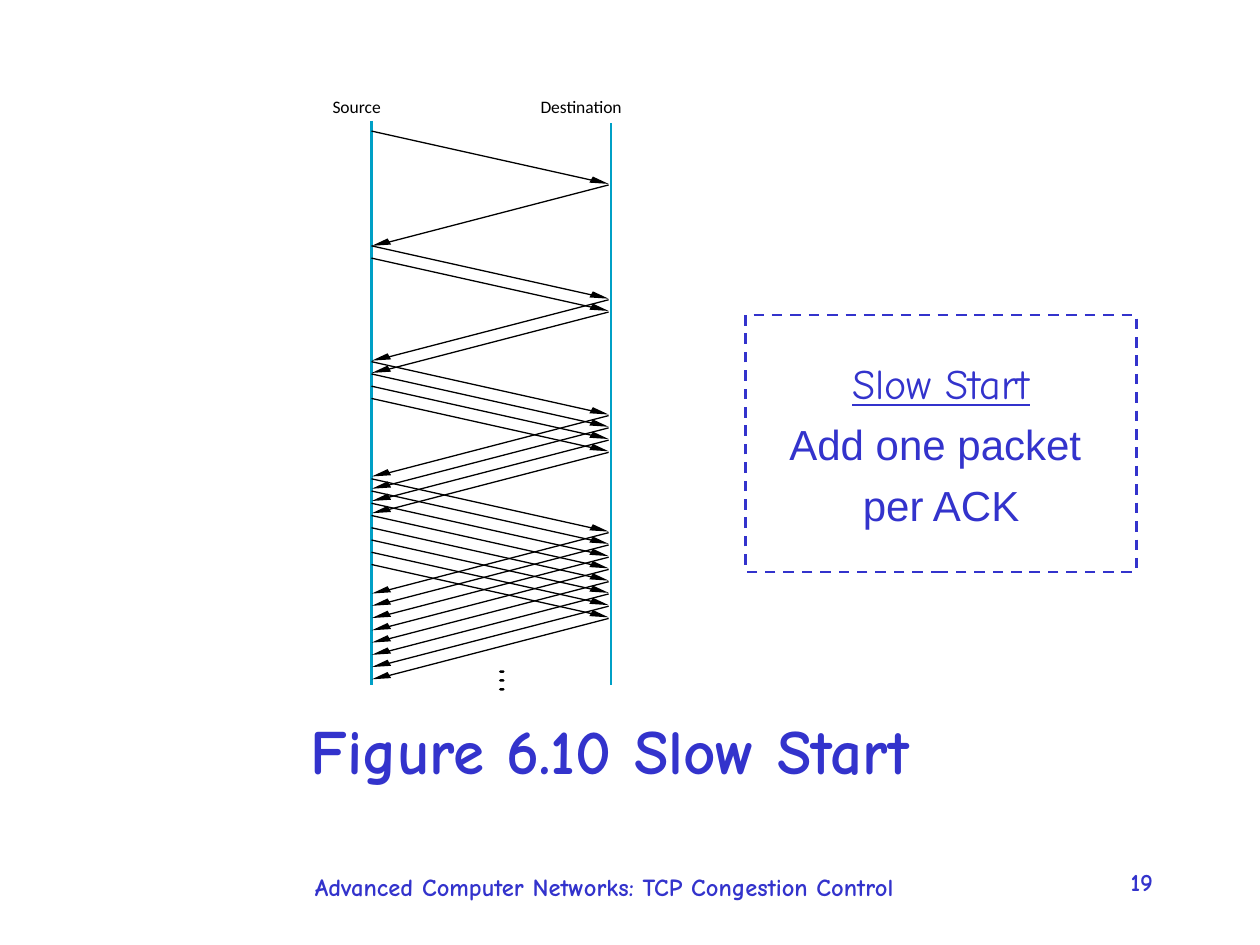
from dataclasses import dataclass

from lxml import etree
from pptx import Presentation, util as u
from pptx.dml.color import RGBColor
from pptx.enum import dml, shapes, text
from pptx.oxml.ns import qn

Pt = u.Pt


@dataclass(frozen=True)
class Theme:
    blue: RGBColor = RGBColor(0x33, 0x33, 0xCC)
    teal: RGBColor = RGBColor(0x00, 0xA0, 0xC6)
    black: RGBColor = RGBColor(0, 0, 0)
    hand: str = "Comic Neue"
    sans: str = "Arial"
    label: str = "Calibri"
    title_size: int = 36
    note_size: int = 24
    footer_size: int = 14
    label_size: int = 10


T = Theme()
ALIGN = text.PP_ALIGN


def style(p, color, size, align=ALIGN.LEFT, **fmt):
    """Format a paragraph and the font of its runs."""
    p.alignment = align
    for r in p.runs:
        for key, value in dict(fmt, size=Pt(size)).items():
            setattr(r.font, key, value)
        r.font.color.rgb = color


def text_box(parent, box, words, color, size, margin=None, wrap=True, **fmt):
    tf = parent.add_textbox(*map(Pt, box)).text_frame
    tf.word_wrap = wrap
    if margin is not None:
        for side in ("left", "top", "right", "bottom"):
            setattr(tf, f"margin_{side}", Pt(margin))
    tf.text = words
    style(tf.paragraphs[0], color, size, **fmt)


def line(parent, start, end, color, width):
    sp = parent.add_connector(shapes.MSO_CONNECTOR.STRAIGHT,
                              *map(Pt, (*start, *end)))
    sp.line.color.rgb = color
    sp.line.width = Pt(width)
    etree.SubElement(sp._element.spPr, qn("a:effectLst"))


def outline(parent, contours, color):
    """Filled freeform made of one or more closed contours."""
    fb = None
    for contour in contours:
        first, *rest = [(Pt(x), Pt(y)) for x, y in contour]
        if fb is None:
            fb = parent.build_freeform(*first, scale=1.0)
        else:
            fb.move_to(*first)
        fb.add_line_segments(rest, close=True)
    sp = fb.convert_to_shape()
    sp.shadow.inherit = False
    sp.fill.solid()
    sp.fill.fore_color.rgb = color
    sp.line.fill.background()


def message(parent, start, tip, way):
    """Shaft and slim head; way is 1 to the right and -1 to the left."""
    x, y = tip
    line(parent, start, (x - 9.5 * way, y - 2.1), T.black, 0.75)
    outline(parent, [[(x - 11 * way, y - 0.7), tip,
                      (x - 9 * way, y - 4.2)]], T.black)


def sequence_diagram(s, box):
    """Packets double with each round trip between the two timelines."""
    x, y, w, h = box
    group = s.shapes.add_group_shape().shapes
    right = x + w

    # Names and timelines
    for left, width, words in ((x - 22.3, 32, "Source"),
                               (right - 40.3, 50, "Destination")):
        text_box(group, (left, y - 14.4, width, 12), words, T.black,
                 T.label_size, margin=0, wrap=False, name=T.label)
    line(group, (x, y), (x, y + h), T.teal, 1.5)
    line(group, (right, y + 1.4), (right, y + h), T.teal, 1.5)

    # Packets and their acknowledgements
    gap, arrival, reply, returned = 7, 30.2, 30.8, 65.6
    for trip, first in enumerate((5.8, 71.4, 137.6, 204.5)):
        for i in range(2 ** trip):
            sent = y + first + i * gap
            message(group, (x, sent), (right - 1.4, sent + arrival), 1)
            message(group, (right - 1.4, sent + reply),
                    (x + 0.2, sent + returned), -1)

    # Continuation dots
    dot = [(0, 0.7), (0.8, 0), (2.6, 0), (3.2, 0.7), (2.6, 1.4), (0.8, 1.4)]
    outline(group, [[(x + 72.8 + dx, y + 314 + 5.05 * i + dy)
                     for dx, dy in dot] for i in range(3)], T.black)


def note(s, box):
    sp = s.shapes.add_shape(shapes.MSO_SHAPE.RECTANGLE, *map(Pt, box))
    sp.shadow.inherit = False
    sp.fill.background()
    sp.line.color.rgb = T.blue
    sp.line.width = Pt(1.5)
    sp.line.dash_style = dml.MSO_LINE.DASH
    tf = sp.text_frame
    tf.word_wrap = False
    tf.vertical_anchor = text.MSO_ANCHOR.MIDDLE
    lines = (("Slow Start", T.hand, True),
             ("Add one packet ", T.sans, False),
             ("per ACK", T.sans, False))
    for i, (words, font, underline) in enumerate(lines):
        p = tf.add_paragraph() if i else tf.paragraphs[0]
        p.add_run().text = words
        style(p, T.blue, T.note_size, ALIGN.CENTER, name=font,
              underline=underline)
        if i:
            p.space_before = Pt(6)


def title(s, box):
    sp = s.shapes.title
    sp.left, sp.top, sp.width, sp.height = map(Pt, box)
    tf = sp.text_frame
    tf.text = "Figure 6.10 Slow Start"
    tf.vertical_anchor = text.MSO_ANCHOR.MIDDLE
    style(tf.paragraphs[0], T.blue, T.title_size, ALIGN.CENTER,
          name=T.hand, bold=True)


def footer(s, box):
    x, y, w, h = box
    fmt = dict(color=T.blue, size=T.footer_size, name=T.hand, bold=True)
    text_box(s.shapes, (x, y + 2.9, 391, 30),
             "Advanced Computer Networks: TCP Congestion Control", **fmt)
    text_box(s.shapes, (x + w - 108, y, 108, h), "19",
             align=ALIGN.RIGHT, **fmt)


def main():
    prs = Presentation()
    prs.slide_width, prs.slide_height = Pt(720), Pt(540)
    s = prs.slides.add_slide(prs.slide_layouts[5])
    footer(s, (172.8, 491.8, 493.2, 36))
    title(s, (42.5, 388.8, 612, 78.5))
    sequence_diagram(s, (212.3, 69.1, 136.9, 322.6))
    note(s, (426.2, 180, 223.2, 146.9))
    prs.save("out.pptx")


if __name__ == "__main__":
    main()
